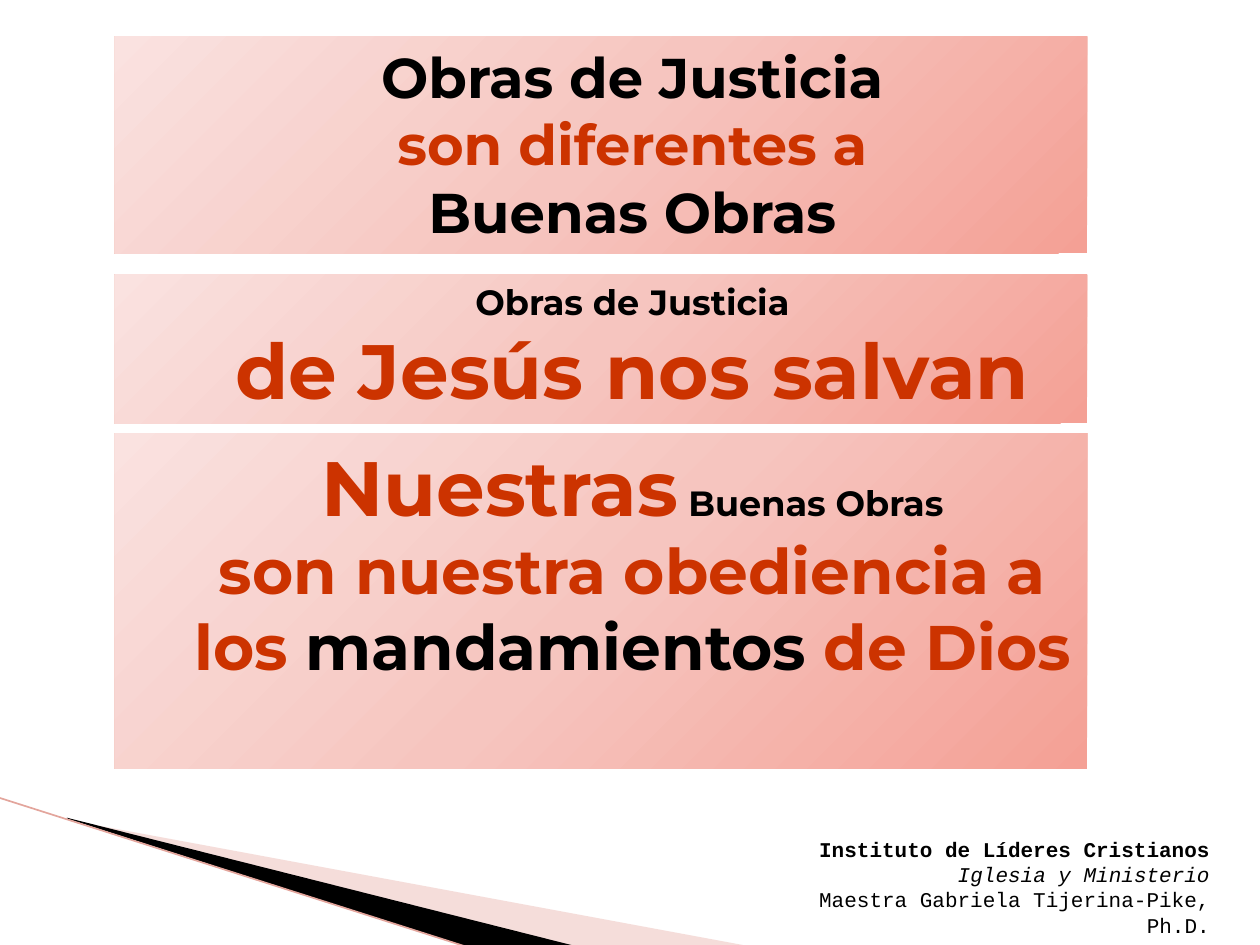
import copy
import pptx
import pptx.dml.color
import pptx.enum.shapes
import pptx.enum.text
import pptx.oxml.ns
import pptx.oxml.xmlchemy
import pptx.util

Pt = pptx.util.Pt
RGB = pptx.dml.color.RGBColor
ALIGN = pptx.enum.text.PP_ALIGN
qn = pptx.oxml.ns.qn
make = pptx.oxml.xmlchemy.OxmlElement

BLACK = RGB(0x00, 0x00, 0x00)
RED = RGB(0xCC, 0x33, 0x00)
ROSE = RGB(0xE7, 0xAC, 0xA4)
EDGE = RGB(0xE3, 0xA5, 0x9C)
FADE = [RGB(0xF4, 0xA0, 0x95), RGB(0xF6, 0xC5, 0xBF), RGB(0xFA, 0xE2, 0xE0)]

# Panels: top, height, lines of (text, size, colour) runs
LEFT, WIDTH = 65.5, 555.8
PANELS = [
    (20.9, 123.8, [
        [("Obras de Justicia", 32, BLACK)],
        [("son diferentes a", 32, RED)],
        [("Buenas Obras", 32, BLACK)],
    ]),
    (157, 85, [
        [("Obras de Justicia", 20, BLACK)],
        [("de Jesús nos salvan", 44, RED)],
    ]),
    (247.7, 191.5, [
        [("Nuestras", 44, RED), (" Buenas Obras", 20, BLACK)],
        [("son nuestra obediencia a los ", 36, RED),
         ("mandamientos", 36, BLACK), (" de Dios ", 36, RED)],
    ]),
]

# Footer: text, bold, italic
FOOTER = [
    ("Instituto de Líderes Cristianos", True, False),
    ("Iglesia y Ministerio", False, True),
    ("Maestra Gabriela Tijerina-Pike, Ph.D.", False, False),
]

# Corner wedges: points, colour, opacity in percent
WEDGES = [
    ([(39.6, 468.7), (428.4, 540.7), (328.3, 540.7), (39.6, 468)], ROSE, 40),
    ([(38.2, 467.3), (329, 540.7), (267.8, 541.4), (38.9, 468)], BLACK, 100),
]


def write(par, text, font="Montserrat", size=12, color=BLACK, bold=True, slant=False):
    run = par.add_run()
    run.text = text
    face = run.font
    face.name, face.size = font, Pt(size)
    face.bold, face.italic = bold, slant
    face.color.rgb = color


def lines(frame, count):
    """Prepare a wrapped, top-anchored frame and yield its paragraphs."""
    frame.word_wrap = True
    frame.vertical_anchor = pptx.enum.text.MSO_ANCHOR.TOP
    for i in range(count):
        yield frame.add_paragraph() if i else frame.paragraphs[0]


def shade(shape):
    """Fill with three evenly spaced colours, starting at the lower right."""
    shape.fill.gradient()
    stops = shape.element.spPr.find(".//" + qn("a:gsLst"))
    stops.insert(1, copy.deepcopy(stops[0]))
    for i, (stop, color) in enumerate(zip(shape.fill.gradient_stops, FADE)):
        stop.position = i / 2
        stop.color.rgb = color
    shape.fill.gradient_angle = 135


deck = pptx.Presentation()
deck.slide_width, deck.slide_height = Pt(720), Pt(540)
slide = deck.slides.add_slide(deck.slide_layouts[6])
shapes = slide.shapes

# Corner decoration
for points, color, alpha in WEDGES:
    dots = [(Pt(x), Pt(y)) for x, y in points]
    path = shapes.build_freeform(*dots[0])
    path.add_line_segments(dots[1:])
    wedge = path.convert_to_shape()
    wedge.shadow.inherit = False
    wedge.fill.solid()
    wedge.fill.fore_color.rgb = color
    wedge.line.fill.background()
    if alpha < 100:
        tint = wedge.element.spPr.find(".//" + qn("a:srgbClr"))
        node = make("a:alpha")
        node.set("val", str(alpha * 1000))
        tint.append(node)

edge = shapes.add_connector(pptx.enum.shapes.MSO_CONNECTOR.STRAIGHT,
                            Pt(-0.7), Pt(455.8), Pt(267.8), Pt(541.4))
edge.line.color.rgb = EDGE
edge.line.width = Pt(0.95)
edge.element.spPr.append(make("a:effectLst"))

# Panels
for top, height, rows in PANELS:
    panel = shapes.add_shape(pptx.enum.shapes.MSO_SHAPE.RECTANGLE,
                             Pt(LEFT), Pt(top), Pt(WIDTH), Pt(height))
    panel.shadow.inherit = False
    panel.line.fill.background()
    shade(panel)
    for par, row in zip(lines(panel.text_frame, len(rows)), rows):
        par.alignment, par.level = ALIGN.CENTER, 1
        props = par._p.get_or_add_pPr()
        props.set("marL", str(Pt(36)))
        props.set("indent", "0")
        for text, size, color in row:
            write(par, text, size=size, color=color)

# Footer
box = shapes.add_textbox(Pt(427.7), Pt(474.5), Pt(270.7), Pt(51.1))
for par, (text, bold, slant) in zip(lines(box.text_frame, len(FOOTER)), FOOTER):
    par.alignment = ALIGN.RIGHT
    write(par, text, font="Courier New", bold=bold, slant=slant)

deck.save("out.pptx")
